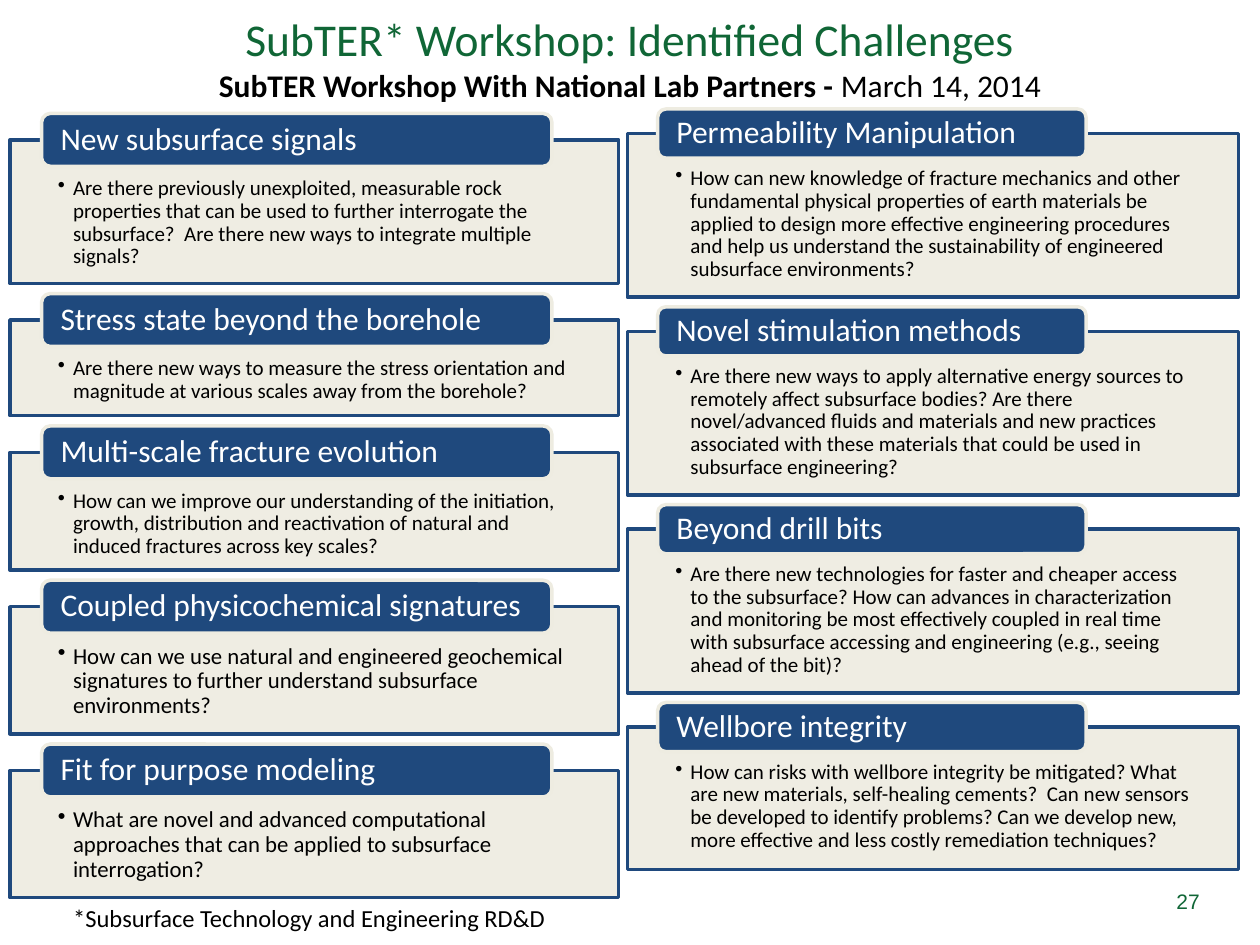
from dataclasses import dataclass

from lxml.etree import SubElement
from pptx import Presentation
from pptx.dml.color import RGBColor
from pptx.enum.shapes import MSO_SHAPE
from pptx.enum.text import MSO_ANCHOR, PP_ALIGN
from pptx.oxml.ns import qn
from pptx.shapes.autoshape import Shape
from pptx.slide import Slide
from pptx.util import Emu, Inches, Pt


@dataclass(frozen=True)
class Theme:
    green: str = "106636"
    navy: str = "1F497D"
    cream: str = "EEECE1"
    white: str = "FFFFFF"
    black: str = "000000"
    font: str = "Calibri"
    number_font: str = "Arial"
    title_size: int = 26
    heading_size: int = 18
    note_size: int = 14
    small_size: int = 12
    border: int = 2


@dataclass(frozen=True)
class Span:
    text: str
    size: int
    color: str
    bold: bool = False
    font: str = "Calibri"


@dataclass(frozen=True)
class Challenge:
    heading: str
    question: str
    rows: float
    size: int = 12


@dataclass(frozen=True)
class Stack:
    """A column of cards, measured in grid columns and rows."""
    left: float
    top: float
    width: float
    gap: float
    tab_left: float
    tab_width: float
    tab_rows: float
    inset_rows: float
    challenges: tuple[Challenge, ...]


THEME = Theme()
SLIDE_WIDTH, SLIDE_HEIGHT = Inches(10), Inches(7.5)
COLUMNS, ROWS = 100, 75

SIGNALS = Stack(0.8, 11.1, 48.3, 2.9, 3.3, 40.5, 4.2, 3, (
    Challenge("New subsurface signals",
              "Are there previously unexploited, measurable rock properties that can be used to "
              "further interrogate the subsurface?  Are there new ways to integrate multiple "
              "signals?", 11.4),
    Challenge("Stress state beyond the borehole",
              "Are there new ways to measure the stress orientation and magnitude at various "
              "scales away from the borehole?", 7.6),
    Challenge("Multi-scale fracture evolution",
              "How can we improve our understanding of the initiation, growth, distribution and "
              "reactivation of natural and induced fractures across key scales?", 9.35),
    Challenge("Coupled physicochemical signatures",
              "How can we use natural and engineered geochemical signatures to further "
              "understand subsurface environments?", 10.1, 13),
    Challenge("Fit for purpose modeling",
              "What are novel and advanced computational approaches that can be applied to "
              "subsurface interrogation?", 10.1, 13),
))

ENGINEERING = Stack(49.8, 10.6, 48.5, 2.7, 52.2, 34, 3.9, 2.7, (
    Challenge("Permeability Manipulation",
              "How can new knowledge of fracture mechanics and other fundamental physical "
              "properties of earth materials be applied to design more effective engineering "
              "procedures and help us understand the sustainability of engineered subsurface "
              "environments?", 13),
    Challenge("Novel stimulation methods",
              "Are there new ways to apply alternative energy sources to remotely affect "
              "subsurface bodies? Are there novel/advanced fluids and materials and new "
              "practices associated with these materials that could be used in subsurface "
              "engineering?", 13),
    Challenge("Beyond drill bits",
              "Are there new technologies for faster and cheaper access to the subsurface? How "
              "can advances in characterization and monitoring be most effectively coupled in "
              "real time with subsurface accessing and engineering (e.g., seeing ahead of the "
              "bit)?", 13),
    Challenge("Wellbore integrity",
              "How can risks with wellbore integrity be mitigated? What are new materials, "
              "self-healing cements?  Can new sensors be developed to identify problems? Can we "
              "develop new, more effective and less costly remediation techniques?", 11.3),
))


def across(columns: float) -> Emu:
    return Emu(round(SLIDE_WIDTH * columns / COLUMNS))


def down(rows: float) -> Emu:
    return Emu(round(SLIDE_HEIGHT * rows / ROWS))


def place(left: float, top: float, width: float, height: float) -> tuple[Emu, ...]:
    return across(left), down(top), across(width), down(height)


def add_span(para, span: Span) -> None:
    run = para.add_run()
    run.text = span.text
    run.font.name = span.font
    run.font.size = Pt(span.size)
    run.font.bold = span.bold
    run.font.color.rgb = RGBColor.from_string(span.color)


def add_bullet(para) -> None:
    para.level = 1
    properties = para._p.get_or_add_pPr()
    properties.set("marL", str(across(1.2)))
    properties.set("indent", str(-across(1.2)))
    SubElement(properties, qn("a:buChar")).set("char", "•")


def add_box(page: Slide, kind: MSO_SHAPE, area: tuple[Emu, ...], fill: str, line: str) -> Shape:
    box = page.shapes.add_shape(kind, *area)
    box.shadow.inherit = False
    box.fill.solid()
    box.fill.fore_color.rgb = RGBColor.from_string(fill)
    box.line.color.rgb = RGBColor.from_string(line)
    box.line.width = Pt(THEME.border)
    return box


def fill_box(box: Shape, span: Span, insets: tuple[float, float, float],
             anchor: MSO_ANCHOR, bullet: bool = False) -> None:
    """Write one left-aligned paragraph; insets are side, top and bottom."""
    frame = box.text_frame
    frame.word_wrap = True
    frame.vertical_anchor = anchor
    side, top, bottom = insets
    frame.margin_left = frame.margin_right = across(side)
    frame.margin_top, frame.margin_bottom = down(top), down(bottom)
    para = frame.paragraphs[0]
    if bullet:
        add_bullet(para)
    para.alignment = PP_ALIGN.LEFT
    para.line_spacing = 0.9
    add_span(para, span)


def add_stack(page: Slide, stack: Stack) -> None:
    top = stack.top
    for item in stack.challenges:
        # Panel with the question
        panel = add_box(page, MSO_SHAPE.RECTANGLE,
                        place(stack.left, top, stack.width, item.rows), THEME.cream, THEME.navy)
        color = panel.fill._xPr.find(f".//{qn('a:srgbClr')}")
        SubElement(color, qn("a:alpha")).set("val", "90000")
        fill_box(panel, Span(item.question, item.size, THEME.black),
                 (3.8, stack.inset_rows, 0.9), MSO_ANCHOR.TOP, bullet=True)
        # Heading tab, centred on the panel's top edge
        tab = add_box(page, MSO_SHAPE.ROUNDED_RECTANGLE,
                      place(stack.tab_left, top - stack.tab_rows / 2,
                            stack.tab_width, stack.tab_rows), THEME.navy, THEME.cream)
        fill_box(tab, Span(item.heading, THEME.heading_size, THEME.white),
                 (1.3, 0, 0), MSO_ANCHOR.MIDDLE)
        top += item.rows + stack.gap


def add_text(page: Slide, area: tuple[Emu, ...], lines: list[list[Span]],
             align: PP_ALIGN, anchor: MSO_ANCHOR = MSO_ANCHOR.TOP) -> None:
    frame = page.shapes.add_textbox(*area).text_frame
    frame.word_wrap = True
    frame.vertical_anchor = anchor
    for index, spans in enumerate(lines):
        para = frame.add_paragraph() if index else frame.paragraphs[0]
        para.alignment = align
        for span in spans:
            add_span(para, span)


def main() -> None:
    deck = Presentation()
    deck.slide_width, deck.slide_height = SLIDE_WIDTH, SLIDE_HEIGHT
    page = deck.slides.add_slide(deck.slide_layouts[6])

    # Title and subtitle
    add_text(page, place(0, 0.4, 100, 8.4), [
        [Span("SubTER* Workshop: Identified Challenges", THEME.title_size, THEME.green)],
        [Span("SubTER Workshop With National Lab Partners - ", THEME.heading_size,
              THEME.black, bold=True),
         Span("March 14, 2014", THEME.heading_size, THEME.black)],
    ], PP_ALIGN.CENTER)

    # Challenge cards
    for stack in (SIGNALS, ENGINEERING):
        add_stack(page, stack)

    # Footnote and page number
    add_text(page, place(2.5, 71.2, 44.1, 3.4), [
        [Span("*Subsurface Technology and Engineering RD&D", THEME.note_size, THEME.black)],
    ], PP_ALIGN.CENTER)
    add_text(page, place(92, 69.5, 4.2, 4), [
        [Span("27", THEME.small_size, THEME.green, font=THEME.number_font)],
    ], PP_ALIGN.RIGHT, MSO_ANCHOR.MIDDLE)

    deck.save("out.pptx")


if __name__ == "__main__":
    main()
